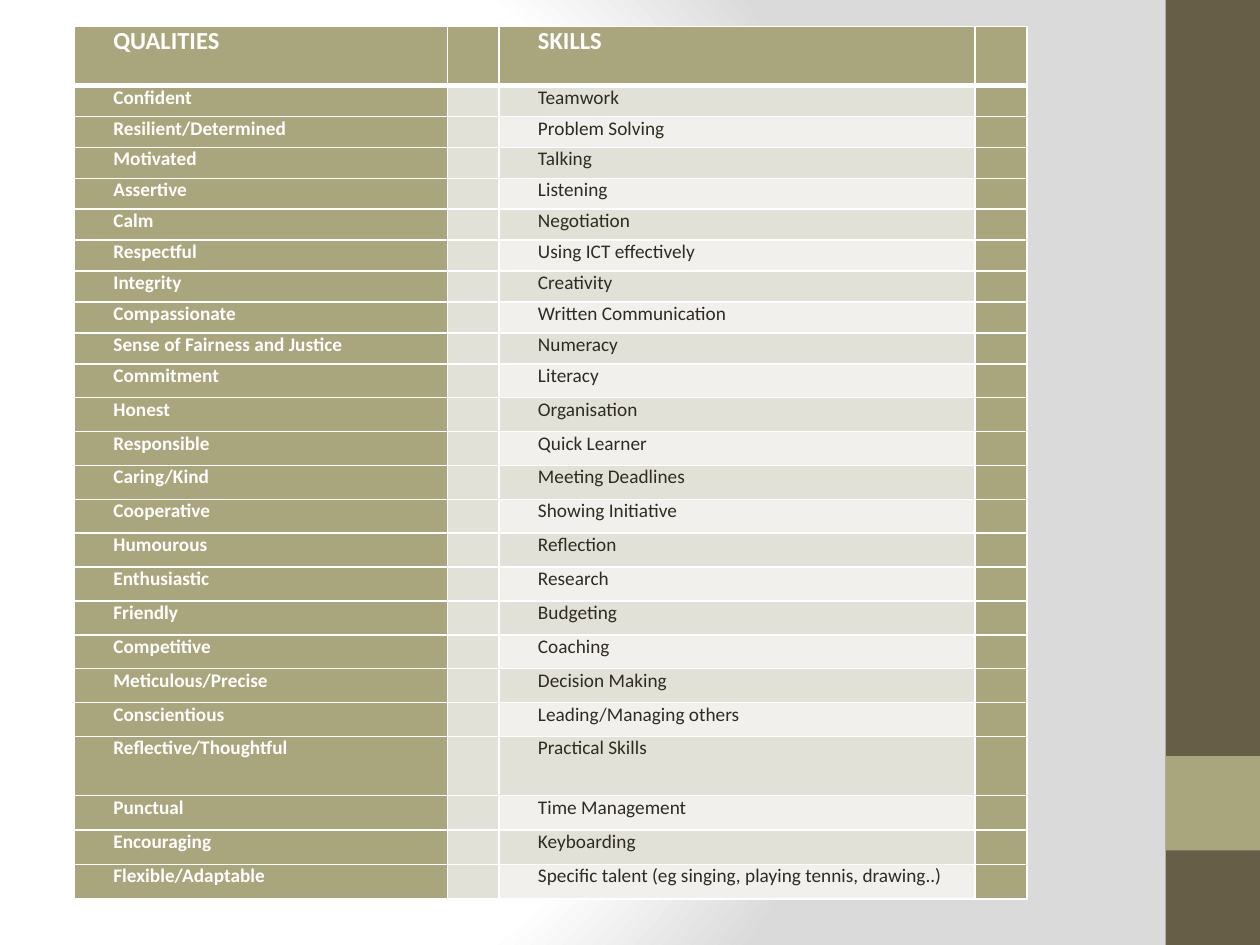
from pptx import Presentation
from pptx.dml.color import RGBColor as Rgb
from pptx.enum.shapes import MSO_SHAPE as Shape
from pptx.oxml import parse_xml
from pptx.oxml.ns import nsdecls
from pptx.util import Inches, Pt

COLORS = {"white": "FFFFFF", "gray": "DADADA", "brown": "675E47",
          "olive": "A9A57C", "band": "E2E1D7", "pale": "F1F0EC",
          "ink": "2F2B20"}
COLS = [2.96, 0.41, 3.78, 0.41]
# Row count and shared height of each run of equal rows
RUNS = [(1, 0.47), (9, 2.21), (11, 2.96), (1, 0.47), (3, 0.82)]
ROWS = [
    ("QUALITIES", "SKILLS"),
    ("Confident", "Teamwork"),
    ("Resilient/Determined", "Problem Solving"),
    ("Motivated", "Talking"),
    ("Assertive", "Listening"),
    ("Calm", "Negotiation"),
    ("Respectful", "Using ICT effectively"),
    ("Integrity", "Creativity"),
    ("Compassionate", "Written Communication"),
    ("Sense of Fairness and Justice", "Numeracy"),
    ("Commitment", "Literacy"),
    ("Honest", "Organisation"),
    ("Responsible", "Quick Learner"),
    ("Caring/Kind", "Meeting Deadlines"),
    ("Cooperative", "Showing Initiative"),
    ("Humourous", "Reflection"),
    ("Enthusiastic", "Research"),
    ("Friendly", "Budgeting"),
    ("Competitive", "Coaching"),
    ("Meticulous/Precise", "Decision Making"),
    ("Conscientious", "Leading/Managing others"),
    ("Reflective/Thoughtful", "Practical Skills"),
    ("Punctual", "Time Management"),
    ("Encouraging", "Keyboarding"),
    ("Flexible/Adaptable",
     "Specific talent (eg singing, playing tennis, drawing..)"),
]


def color(name):
    return Rgb.from_string(COLORS[name])


def set_back(slide):
    """Fill the background with a radial gradient from white to gray."""
    stops = "".join(
        f'<a:gs pos="{pos * 1000}"><a:srgbClr val="{COLORS[name]}"/></a:gs>'
        for pos, name in [(0, "white"), (75, "white"), (100, "gray")])
    slide.element.cSld.insert(0, parse_xml(
        f'<p:bg {nsdecls("p", "a")}><p:bgPr><a:gradFill rotWithShape="1">'
        f'<a:gsLst>{stops}</a:gsLst><a:path path="circle">'
        '<a:fillToRect l="20000" t="50000" r="100000" b="50000"/></a:path>'
        '</a:gradFill><a:effectLst/></p:bgPr></p:bg>'))


def add_bar(slide, top, height, fill):
    bar = slide.shapes.add_shape(Shape.RECTANGLE, Inches(9.25), Inches(top),
                                 Inches(0.75), Inches(height))
    bar.shadow.inherit = False
    bar.fill.solid()
    bar.fill.fore_color.rgb = color(fill)
    bar.line.fill.background()


def set_edges(cell, base):
    """Draw white borders, with the given width in points at the bottom."""
    props = cell._tc.get_or_add_tcPr()
    edges = [("L", 1), ("R", 1), ("T", 1), ("B", base)]
    for spot, (side, width) in enumerate(edges):
        props.insert(spot, parse_xml(
            f'<a:ln{side} {nsdecls("a")} w="{Pt(width)}"><a:solidFill>'
            f'<a:srgbClr val="{COLORS["white"]}"/></a:solidFill>'
            f'</a:ln{side}>'))


def fill_cell(cell, text, size, fill, ink, bold):
    cell.margin_left = cell.margin_right = Inches(0.06)
    cell.margin_top = cell.margin_bottom = 0
    cell.fill.solid()
    cell.fill.fore_color.rgb = color(fill)
    para = cell.text_frame.paragraphs[0]
    if not text:
        # The end mark keeps an empty cell from stretching its row
        para._p.append(parse_xml(
            f'<a:endParaRPr {nsdecls("a")} sz="{size * 100}"/>'))
        return
    para.text = text
    para._p.get_or_add_pPr().set("marL", str(Inches(0.25)))
    font = para.runs[0].font
    font.name, font.size, font.bold = "Calibri", Pt(size), bold
    font.color.rgb = color(ink)


def add_grid(slide):
    grid = slide.shapes.add_table(
        len(ROWS), len(COLS), Inches(0.59), Inches(0.21),
        Inches(sum(COLS)), Inches(sum(high for _, high in RUNS))).table
    for col, width in zip(grid.columns, COLS):
        col.width = Inches(width)
    highs = [Inches(high / count) for count, high in RUNS
             for _ in range(count)]
    for r, (quality, skill) in enumerate(ROWS):
        grid.rows[r].height = highs[r]
        head = r == 0
        for c, text in enumerate([quality, "", skill, ""]):
            dark = head or c in (0, 3)
            light = "pale" if c == 2 and r % 2 == 0 else "band"
            cell = grid.cell(r, c)
            fill_cell(cell, text, 14 if head else 11,
                      "olive" if dark else light,
                      "white" if dark else "ink", dark)
            # Both sides of the header rule share its width
            set_edges(cell, 3 if head else 1)


def main():
    deck = Presentation()
    deck.slide_width, deck.slide_height = Inches(10), Inches(7.5)
    slide = deck.slides.add_slide(deck.slide_layouts[6])
    set_back(slide)
    add_bar(slide, 0, 7.5, "brown")
    add_bar(slide, 6, 0.75, "olive")
    add_grid(slide)
    deck.save("out.pptx")


if __name__ == "__main__":
    main()
